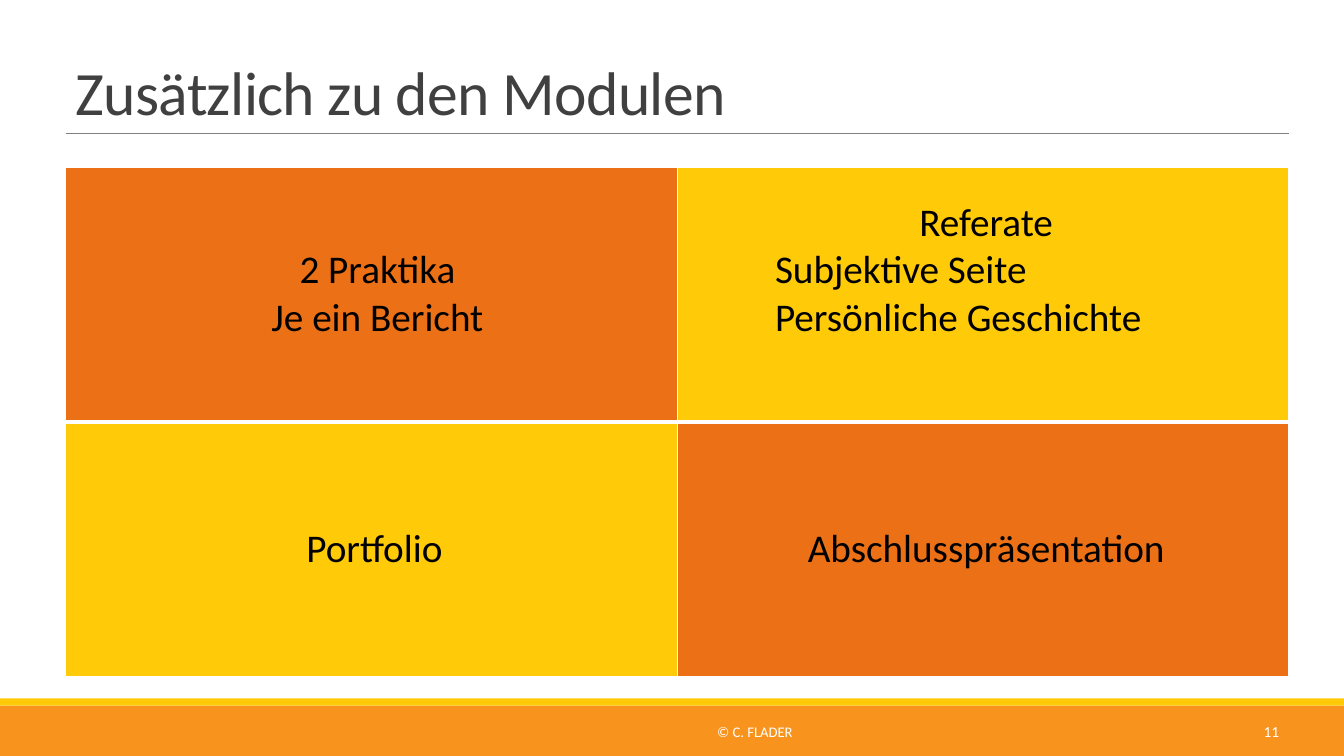
from lxml.etree import SubElement
from pptx import Presentation
from pptx.dml.color import RGBColor
from pptx.enum.shapes import MSO_CONNECTOR, MSO_SHAPE
from pptx.enum.text import MSO_ANCHOR, MSO_AUTO_SIZE, PP_ALIGN
from pptx.oxml import parse_xml
from pptx.oxml.ns import nsdecls, qn
from pptx.util import Pt

ORANGE = RGBColor(0xEC, 0x70, 0x16)
YELLOW = RGBColor(0xFF, 0xCA, 0x08)
FOOTER_ORANGE = RGBColor(0xF8, 0x93, 0x1D)
RULE_GRAY = RGBColor(0x80, 0x80, 0x80)
TITLE_GRAY = RGBColor(0x40, 0x40, 0x40)
BLACK = RGBColor(0, 0, 0)
WHITE = RGBColor(0xFF, 0xFF, 0xFF)

FONT = "Calibri"
PAGE_WIDTH, PAGE_HEIGHT = 960, 540
LEFT, WIDTH = 46.8, 874
FOOTER_TOP = 504
CELL_LINE = 34.2
CELL_MARGIN = 11.5

# Each line: text, alignment, left indent in points
CELLS = [
    [
        [("2 Praktika", PP_ALIGN.CENTER, 4.3), ("Je ein Bericht", PP_ALIGN.CENTER, 4.3)],
        [
            ("Referate", PP_ALIGN.CENTER, 0),
            ("Subjektive Seite", PP_ALIGN.LEFT, 58.3),
            ("Persönliche Geschichte", PP_ALIGN.LEFT, 58.3),
        ],
    ],
    [
        [("Portfolio", PP_ALIGN.CENTER, 0)],
        [("Abschlusspräsentation", PP_ALIGN.CENTER, 0)],
    ],
]


def add_span(para, text, size, color):
    span = para.add_run()
    span.text = text
    span.font.name = FONT
    span.font.size = Pt(size)
    span.font.bold = False
    span.font.color.rgb = color
    return span


def add_bar(page, top, height, color):
    bar = page.shapes.add_shape(
        MSO_SHAPE.RECTANGLE, Pt(0), Pt(top), Pt(PAGE_WIDTH), Pt(height))
    bar.shadow.inherit = False
    bar.fill.solid()
    bar.fill.fore_color.rgb = color
    bar.line.fill.background()


def add_title_rule(page, y):
    rule = page.shapes.add_connector(
        MSO_CONNECTOR.STRAIGHT, Pt(LEFT), Pt(y), Pt(LEFT + WIDTH), Pt(y))
    rule.line.color.rgb = RULE_GRAY
    rule.line.width = Pt(0.5)
    SubElement(rule._element.spPr, qn("a:effectLst"))


def add_footer_text(page, left, width, text, size, align):
    box = page.shapes.add_textbox(Pt(left), Pt(508.3), Pt(width), Pt(28.8))
    frame = box.text_frame
    frame.word_wrap = True
    frame.vertical_anchor = MSO_ANCHOR.MIDDLE
    para = frame.paragraphs[0]
    para.alignment = align
    add_span(para, text, size, WHITE)


def set_title(page, text):
    title = page.shapes.title
    title.left, title.top = Pt(LEFT), Pt(17.3)
    title.width, title.height = Pt(WIDTH), Pt(77.8)
    frame = title.text_frame
    frame.auto_size = MSO_AUTO_SIZE.NONE
    frame.vertical_anchor = MSO_ANCHOR.BOTTOM
    para = frame.paragraphs[0]
    para.alignment = PP_ALIGN.LEFT
    para.line_spacing = 0.85
    span = add_span(para, text, 44, TITLE_GRAY)
    span.font._element.set("spc", "-50")


def set_borders(cell, widths):
    """Draw white borders; widths are left, right, top, bottom in points."""
    properties = cell._tc.get_or_add_tcPr()
    for index, (side, width) in enumerate(zip("LRTB", widths)):
        properties.insert(index, parse_xml(
            f'<a:ln{side} {nsdecls("a")} w="{Pt(width)}"><a:solidFill>'
            f'<a:srgbClr val="{WHITE}"/></a:solidFill></a:ln{side}>'))


def fill_cell(cell, lines, color):
    cell.fill.solid()
    cell.fill.fore_color.rgb = color
    cell.vertical_anchor = MSO_ANCHOR.MIDDLE
    cell.margin_left = cell.margin_top = cell.margin_bottom = Pt(CELL_MARGIN)
    cell.margin_right = Pt(7.2)
    frame = cell.text_frame
    for index, (text, align, indent) in enumerate(lines):
        para = frame.add_paragraph() if index else frame.paragraphs[0]
        para.alignment = align
        if indent:
            para._p.get_or_add_pPr().set("marL", str(Pt(indent)))
        add_span(para, text, 28, BLACK)


def add_requirements_table(page):
    table = page.shapes.add_table(
        2, 2, Pt(LEFT), Pt(119.5), Pt(WIDTH), Pt(363.6)).table
    table.first_row = table.horz_banding = False
    for row in table.rows:
        row.height = Pt(181.8)
    for r, row_lines in enumerate(CELLS):
        for c, lines in enumerate(row_lines):
            cell = table.cell(r, c)
            fill_cell(cell, lines, YELLOW if (r + c) % 2 else ORANGE)
            set_borders(cell, (1, 1, 3 if r else 1, 1 if r else 3))
    # The list under "Referate" sits one line above the middle of its cell
    table.cell(0, 1).margin_bottom = Pt(CELL_MARGIN + CELL_LINE)


def main():
    deck = Presentation()
    deck.slide_width, deck.slide_height = Pt(PAGE_WIDTH), Pt(PAGE_HEIGHT)
    page = deck.slides.add_slide(deck.slide_layouts[5])
    add_bar(page, FOOTER_TOP, PAGE_HEIGHT - FOOTER_TOP, FOOTER_ORANGE)
    add_bar(page, 498.9, 5.1, YELLOW)
    add_title_rule(page, 95)
    set_title(page, "Zusätzlich zu den Modulen")
    add_requirements_table(page)
    add_footer_text(page, 252.7, 573.1, "© C. FLADER", 10.5, PP_ALIGN.CENTER)
    add_footer_text(page, 825.1, 95.8, "11", 11, PP_ALIGN.RIGHT)
    deck.save("out.pptx")


if __name__ == "__main__":
    main()
